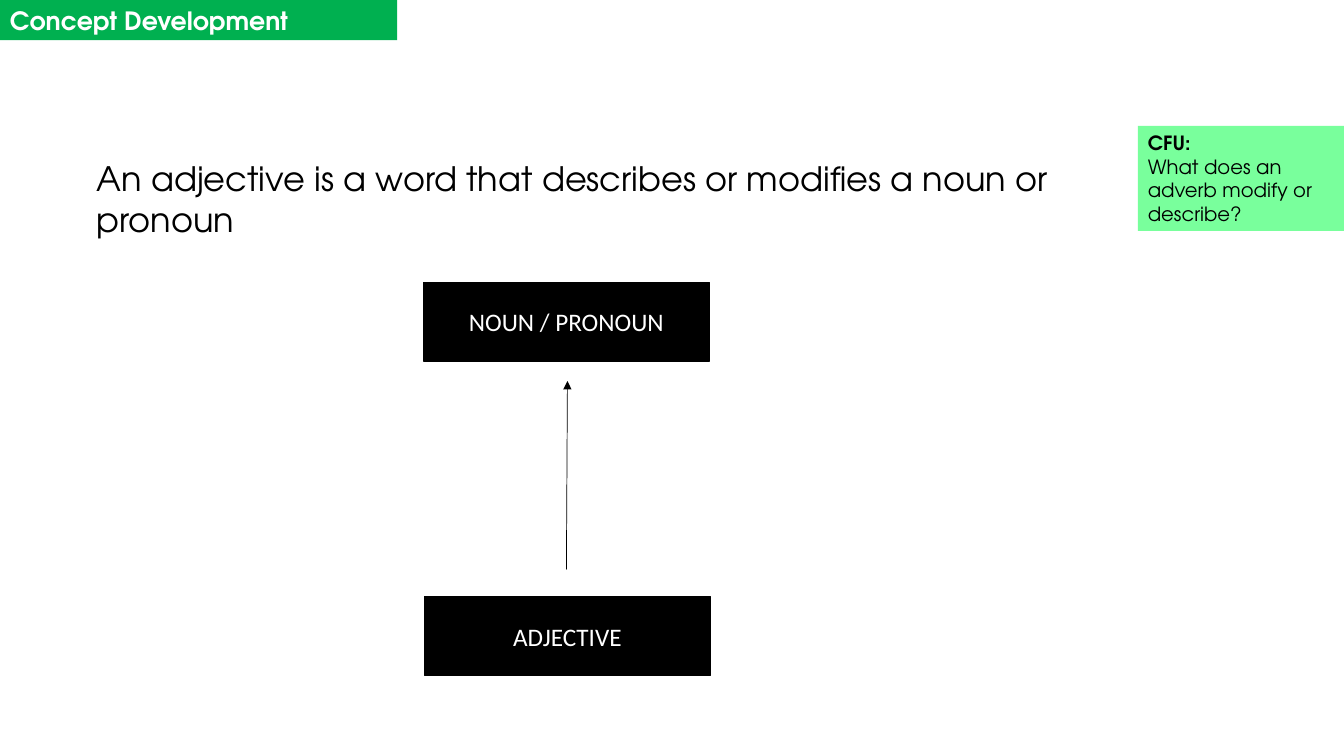
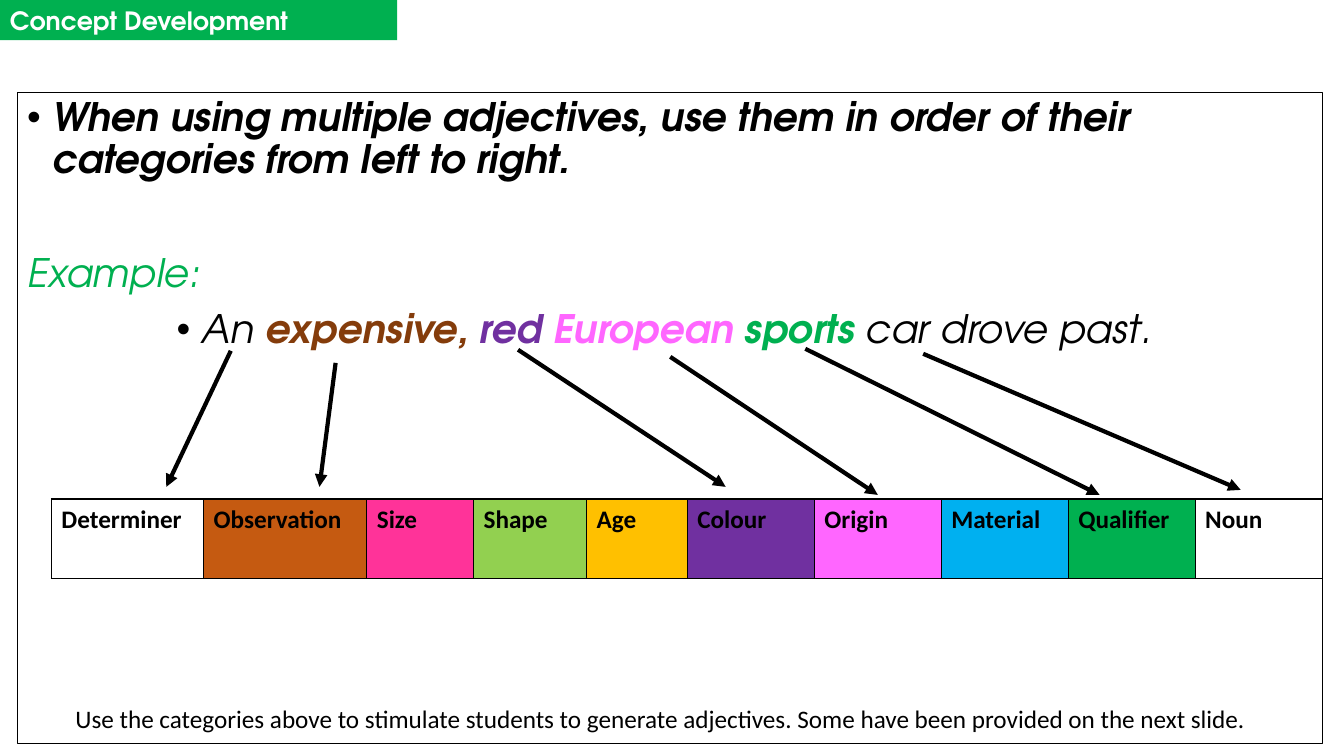
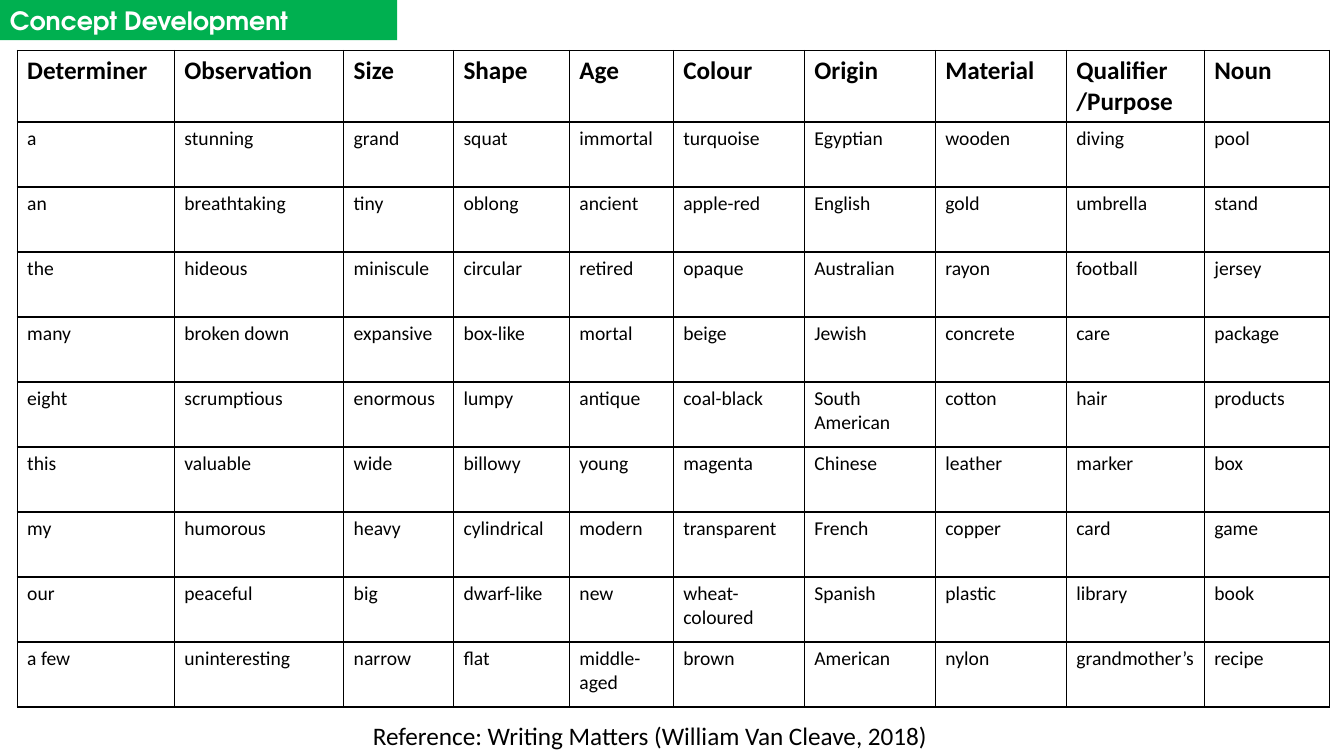
from lxml import etree
from pptx import Presentation
from pptx.dml.color import RGBColor
from pptx.enum.shapes import MSO_CONNECTOR, MSO_SHAPE
from pptx.enum.text import MSO_ANCHOR, PP_ALIGN
from pptx.oxml.ns import qn
from pptx.util import Pt

EMU_PER_PX = 4572
SLIDE_WIDTH, SLIDE_HEIGHT = 2667, 1500
HEADING_FONT = "TeX Gyre Adventor"
PLAIN_FONT = "Calibri"

RECTANGLE = MSO_SHAPE.RECTANGLE
STRAIGHT = MSO_CONNECTOR.STRAIGHT
TOP, MIDDLE = MSO_ANCHOR.TOP, MSO_ANCHOR.MIDDLE
LEFT, CENTER = PP_ALIGN.LEFT, PP_ALIGN.CENTER

BLACK = RGBColor(0x00, 0x00, 0x00)
WHITE = RGBColor(0xFF, 0xFF, 0xFF)
GREEN = RGBColor(0x00, 0xB0, 0x50)
MINT = RGBColor(0x79, 0xFF, 0x9C)
BROWN = RGBColor(0x84, 0x3C, 0x0B)
RUST = RGBColor(0xC5, 0x5A, 0x11)
ROSE = RGBColor(0xFF, 0x33, 0x99)
LIME = RGBColor(0x92, 0xD0, 0x50)
AMBER = RGBColor(0xFF, 0xC0, 0x00)
PURPLE = RGBColor(0x70, 0x30, 0xA0)
PINK = RGBColor(0xFF, 0x66, 0xFF)
SKY = RGBColor(0x00, 0xB0, 0xF0)

CATEGORIES = ["Determiner", "Observation", "Size", "Shape", "Age",
              "Colour", "Origin", "Material", "Qualifier", "Noun"]
CATEGORY_FILLS = [WHITE, RUST, ROSE, LIME, AMBER, PURPLE, PINK, SKY, GREEN, WHITE]
CATEGORY_WIDTHS = [302, 324, 212, 224, 200] + [252] * 5

WORD_HEADINGS = CATEGORIES[:8] + ["Qualifier\n/Purpose", "Noun"]
WORD_WIDTHS = [312, 336, 218, 230, 206, 260, 260, 260, 274, 248]
WORDS = [
    ["a", "stunning", "grand", "squat", "immortal",
     "turquoise", "Egyptian", "wooden", "diving", "pool"],
    ["an", "breathtaking", "tiny", "oblong", "ancient",
     "apple-red", "English", "gold", "umbrella", "stand"],
    ["the", "hideous", "miniscule", "circular", "retired",
     "opaque", "Australian", "rayon", "football", "jersey"],
    ["many", "broken down", "expansive", "box-like", "mortal",
     "beige", "Jewish", "concrete", "care", "package"],
    ["eight", "scrumptious", "enormous", "lumpy", "antique",
     "coal-black", "South American", "cotton", "hair", "products"],
    ["this", "valuable", "wide", "billowy", "young",
     "magenta", "Chinese", "leather", "marker", "box"],
    ["my", "humorous", "heavy", "cylindrical", "modern",
     "transparent", "French", "copper", "card", "game"],
    ["our", "peaceful", "big", "dwarf-like", "new",
     "wheat-coloured", "Spanish", "plastic", "library", "book"],
    ["a few", "uninteresting", "narrow", "flat", "middle-aged",
     "brown", "American", "nylon", "grandmother’s", "recipe"],
]

SENTENCE = [("An ", BLACK, False), ("expensive, ", BROWN, True),
            ("red ", PURPLE, True), ("European ", PINK, True),
            ("sports", GREEN, True), (" car drove past. ", BLACK, False)]
WORD_ARROWS = [
    ((424, 512), (296, 782)),
    ((632, 536), (600, 782)),
    ((994, 510), (1406, 782)),
    ((1296, 524), (1708, 798)),
    ((1564, 508), (2148, 798)),
    ((1798, 518), (2428, 788)),
]


def px(length):
    return length * EMU_PER_PX


def add_span(para, text, size, color=BLACK, font=PLAIN_FONT, bold=False, italic=False):
    span = para.add_run()
    span.text = text
    span.font.name = font
    span.font.size = Pt(size)
    span.font.color.rgb = color
    span.font.bold = bold
    span.font.italic = italic


def add_text(page, left, top, width, height, text, size, font=PLAIN_FONT, align=LEFT):
    box = page.shapes.add_textbox(px(left), px(top), px(width), px(height))
    box.text_frame.word_wrap = True
    para = box.text_frame.paragraphs[0]
    para.alignment = align
    add_span(para, text, size, font=font)


def add_panel(page, left, top, width, height, fill=None, line=None, line_width=1, anchor=TOP):
    panel = page.shapes.add_shape(RECTANGLE, px(left), px(top), px(width), px(height))
    panel.shadow.inherit = False
    if fill is None:
        panel.fill.background()
    else:
        panel.fill.solid()
        panel.fill.fore_color.rgb = fill
    if line is None:
        panel.line.fill.background()
    else:
        panel.line.color.rgb = line
        panel.line.width = Pt(line_width)
    frame = panel.text_frame
    frame.word_wrap = True
    frame.vertical_anchor = anchor
    frame.paragraphs[0].alignment = LEFT
    return frame


def add_arrow(page, start, end, width):
    arrow = page.shapes.add_connector(STRAIGHT, *map(px, start + end))
    arrow.line.color.rgb = BLACK
    arrow.line.width = Pt(width)
    etree.SubElement(arrow.line._get_or_add_ln(), qn("a:tailEnd"), type="triangle")
    etree.SubElement(arrow._element.spPr, qn("a:effectLst"))


def add_bullet(para):
    properties = para._p.get_or_add_pPr()
    properties.set("marL", str(px(50)))
    properties.set("indent", str(px(-50)))
    etree.SubElement(properties, qn("a:buFont"), typeface="Arial")
    etree.SubElement(properties, qn("a:buChar"), char="•")


def add_borders(cell):
    properties = cell._tc.get_or_add_tcPr()
    for position, side in enumerate(("a:lnL", "a:lnR", "a:lnT", "a:lnB")):
        border = etree.Element(qn(side), w=str(Pt(1)))
        fill = etree.SubElement(border, qn("a:solidFill"))
        etree.SubElement(fill, qn("a:srgbClr"), val=str(BLACK))
        properties.insert(position, border)


def add_grid(page, left, top, widths, heights, rows, fills=None):
    frame = page.shapes.add_table(len(rows), len(widths), px(left), px(top),
                                  px(sum(widths)), px(sum(heights)))
    table = frame.table
    table.first_row = False
    table.horz_banding = False
    for column, width in zip(table.columns, widths):
        column.width = px(width)
    for row, height in zip(table.rows, heights):
        row.height = px(height)
    for row_index, texts in enumerate(rows):
        heading = row_index == 0
        for column_index, text in enumerate(texts):
            cell = table.cell(row_index, column_index)
            if fills:
                cell.fill.solid()
                cell.fill.fore_color.rgb = fills[column_index]
            else:
                cell.fill.background()
            add_borders(cell)
            for line_index, line in enumerate(text.split("\n")):
                text_frame = cell.text_frame
                para = text_frame.add_paragraph() if line_index else text_frame.paragraphs[0]
                add_span(para, line, 18 if heading else 14, bold=heading)


def add_page(deck):
    page = deck.slides.add_slide(deck.slide_layouts[6])
    band = add_panel(page, 0, 0, 788, 80, GREEN)
    add_span(band.paragraphs[0], "Concept Development", 18, WHITE, HEADING_FONT, bold=True)
    return page


def add_question(page, left, top, width, height):
    frame = add_panel(page, left, top, width, height, MINT)
    add_span(frame.paragraphs[0], "CFU:", 14, font=HEADING_FONT, bold=True)
    para = frame.add_paragraph()
    para.alignment = LEFT
    add_span(para, "What does an adverb modify or describe?", 14, font=HEADING_FONT)


def add_diagram(page, left, top, width, height):
    box_height = 156
    labels = [("NOUN / PRONOUN", left, top),
              ("ADJECTIVE", left + 2, top + height - box_height)]
    for label, box_left, box_top in labels:
        frame = add_panel(page, box_left, box_top, width, box_height, BLACK, BLACK, anchor=MIDDLE)
        frame.paragraphs[0].alignment = CENTER
        add_span(frame.paragraphs[0], label, 18, WHITE)
    middle = left + width // 2
    add_arrow(page, (middle, top + 570), (middle + 2, top + 196), 0.5)


def add_lesson(page, left, top, width, height):
    frame = add_panel(page, left, top, width, height, line=BLACK, line_width=0.75)
    rule = frame.paragraphs[0]
    example = frame.add_paragraph()
    sentence = frame.add_paragraph()
    for para, align, space in ((rule, LEFT, 0), (example, LEFT, 51), (sentence, CENTER, 10)):
        para.alignment = align
        para.line_spacing = 0.9
        if space:
            para.space_before = Pt(space)
    add_bullet(rule)
    add_bullet(sentence)
    add_span(rule, "When using multiple adjectives, use them in order of their "
             "categories from left to right.", 28, font=HEADING_FONT, bold=True, italic=True)
    add_span(example, "Example:", 28, GREEN, HEADING_FONT, italic=True)
    for text, color, bold in SENTENCE:
        add_span(sentence, text, 28, color, HEADING_FONT, bold, True)

    add_grid(page, left + 68, top + 806, CATEGORY_WIDTHS, [158], [CATEGORIES], CATEGORY_FILLS)
    for start, end in WORD_ARROWS:
        add_arrow(page, (left + start[0], top + start[1]), (left + end[0], top + end[1]), 3)
    add_text(page, left + 96, top + 1202, SLIDE_WIDTH - left - 96, 80,
             "Use the categories above to stimulate students to generate adjectives. "
             "Some have been provided on the next slide.", 18)


def main():
    deck = Presentation()
    deck.slide_width = px(SLIDE_WIDTH)
    deck.slide_height = px(SLIDE_HEIGHT)

    definition_page = add_page(deck)
    add_question(definition_page, 2258, 250, 409, 208)
    add_text(definition_page, 172, 304, 2022, 390,
             "An adjective is a word that describes or modifies a noun or pronoun",
             24, HEADING_FONT)
    add_diagram(definition_page, 840, 560, 568, 780)

    add_lesson(add_page(deck), 34, 184, 2590, 1292)

    words_page = add_page(deck)
    add_grid(words_page, 34, 100, WORD_WIDTHS, [141] + [129] * len(WORDS),
             [WORD_HEADINGS] + WORDS)
    add_text(words_page, 122, 1420, 2336, 80,
             "Reference: Writing Matters (William Van Cleave, 2018)", 18, align=CENTER)

    deck.save("out.pptx")


if __name__ == "__main__":
    main()
